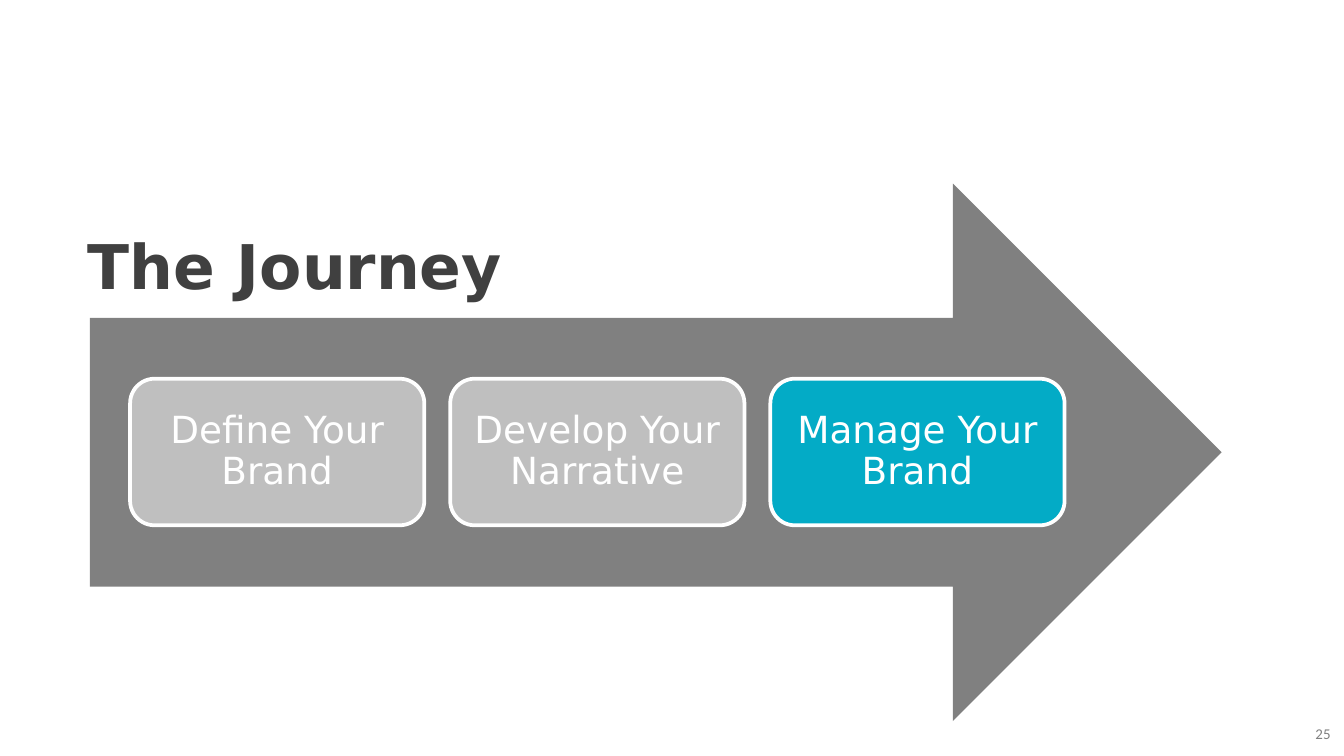
from pptx import Presentation
from pptx.dml.color import RGBColor
from pptx.enum.shapes import MSO_SHAPE
from pptx.enum.text import MSO_ANCHOR, MSO_AUTO_SIZE, PP_ALIGN
from pptx.util import Cm, Pt

HUES = {
    "arrow": "808080",
    "past": "BFBFBF",
    "now": "03ABC6",
    "title": "404040",
    "white": "FFFFFF",
}
FONT = "DejaVu Sans"


def hue(name):
    return RGBColor.from_string(HUES[name])


class Deck:
    """Holds the style and the current slide."""

    def __init__(self, wide, high):
        self.prs = Presentation()
        self.prs.slide_width = Cm(wide)
        self.prs.slide_height = Cm(high)
        self.slide = self.prs.slides.add_slide(self.prs.slide_layouts[5])

    def label(self, frame, text, size, color, align, anchor, pad,
              font=FONT, bold=False):
        frame.word_wrap = True
        frame.auto_size = MSO_AUTO_SIZE.NONE
        frame.vertical_anchor = anchor
        frame.margin_left = frame.margin_right = Cm(pad[0])
        frame.margin_top = frame.margin_bottom = Cm(pad[1])
        para = frame.paragraphs[0]
        para.alignment = align
        run = para.add_run()
        run.text = text
        run.font.name = font
        run.font.size = Pt(size)
        run.font.bold = bold
        run.font.color.rgb = hue(color)
        return para

    def title(self, text, box):
        item = self.slide.shapes.title
        item.left, item.top, item.width, item.height = map(Cm, box)
        self.label(item.text_frame, text, 33, "title", PP_ALIGN.LEFT,
                   MSO_ANCHOR.TOP, (0.18, 0.1), bold=True)

    def shape(self, kind, box, fill):
        item = self.slide.shapes.add_shape(kind, *map(Cm, box))
        item.shadow.inherit = False
        item.fill.solid()
        item.fill.fore_color.rgb = hue(fill)
        item.line.fill.background()
        return item

    def step(self, text, box, fill):
        item = self.shape(MSO_SHAPE.ROUNDED_RECTANGLE, box, fill)
        item.line.color.rgb = hue("white")
        item.line.width = Pt(2)
        para = self.label(item.text_frame, text, 20, "white",
                          PP_ALIGN.CENTER, MSO_ANCHOR.MIDDLE, (0.2, 0.2))
        para.line_spacing = 0.9

    def number(self, text, box):
        item = self.slide.shapes.add_textbox(*map(Cm, box))
        self.label(item.text_frame, text, 8, "arrow", PP_ALIGN.RIGHT,
                   MSO_ANCHOR.MIDDLE, (0.25, 0.13), font="Calibri")


def main():
    deck = Deck(25.4, 14.29)

    # Title and arrow
    deck.title("The Journey", (1.48, 4.2, 17.15, 2.4))
    deck.shape(MSO_SHAPE.RIGHT_ARROW, (1.7, 3.47, 21.39, 10.16), "arrow")

    # Steps along the arrow, the current one in colour
    steps = [
        ("Define Your Brand", "past"),
        ("Develop Your Narrative", "past"),
        ("Manage Your Brand", "now"),
    ]
    for i, (text, fill) in enumerate(steps):
        deck.step(text, (2.46 + 6.05 * i, 7.16, 5.56, 2.77), fill)

    # Page number
    deck.number("25", (24.13, 13.49, 1.27, 0.76))

    deck.prs.save("out.pptx")


if __name__ == "__main__":
    main()
